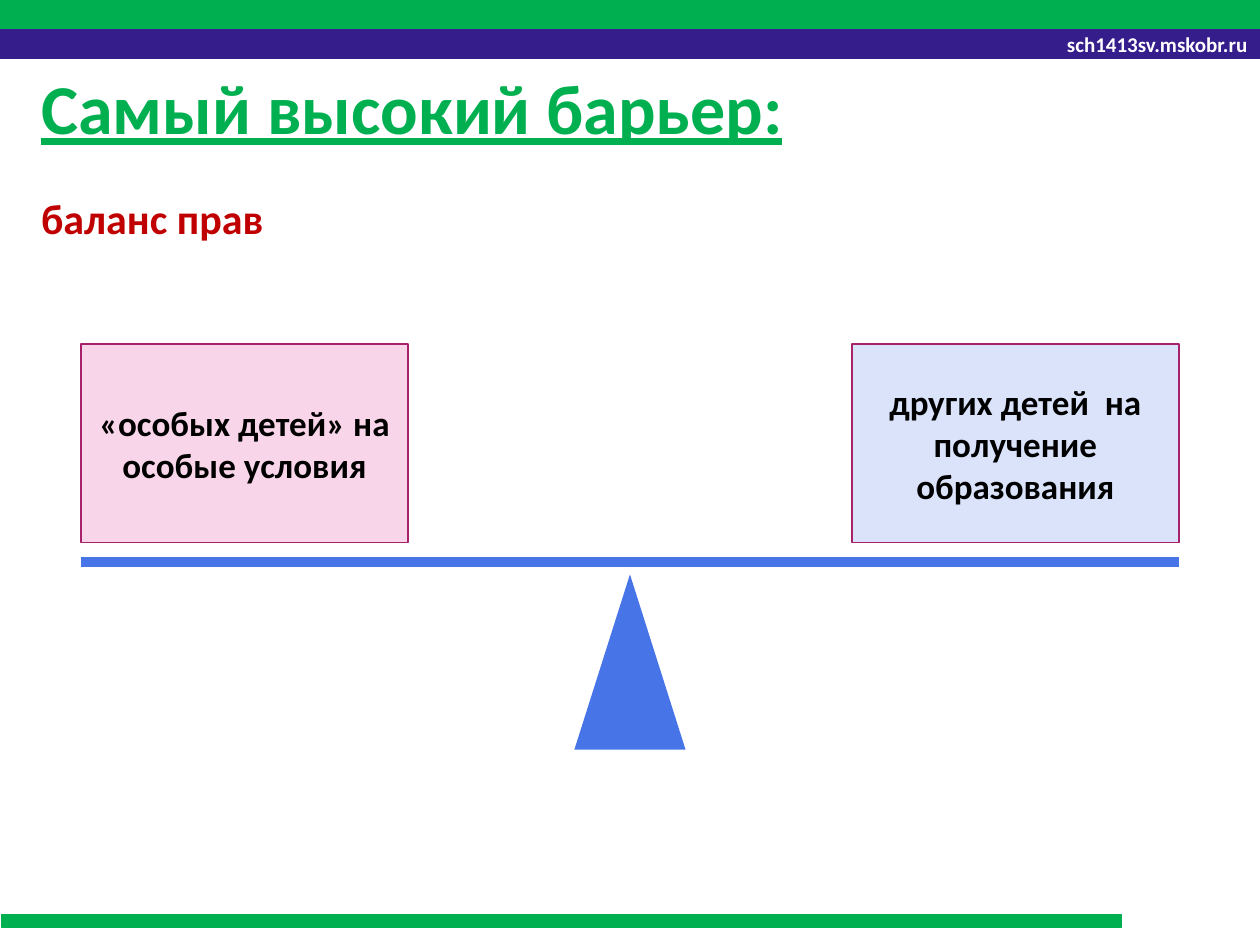
from dataclasses import dataclass
from typing import Optional

from lxml import etree
from pptx import Presentation
from pptx.dml.color import RGBColor
from pptx.enum.shapes import MSO_CONNECTOR, MSO_SHAPE
from pptx.enum.text import MSO_ANCHOR, MSO_AUTO_SIZE, PP_ALIGN
from pptx.oxml.ns import qn
from pptx.util import Cm, Pt

RECT = MSO_SHAPE.RECTANGLE
TRIANGLE = MSO_SHAPE.ISOSCELES_TRIANGLE
STRAIGHT = MSO_CONNECTOR.STRAIGHT
MIDDLE = MSO_ANCHOR.MIDDLE
NO_FIT = MSO_AUTO_SIZE.NONE
FIT_SHAPE = MSO_AUTO_SIZE.SHAPE_TO_FIT_TEXT
LEFT, CENTER, RIGHT = PP_ALIGN.LEFT, PP_ALIGN.CENTER, PP_ALIGN.RIGHT


@dataclass(frozen=True)
class Theme:
    font: str = "Calibri"
    green: str = "00B050"
    violet: str = "351D8C"
    blue: str = "4775E7"
    pink: str = "F9D5E9"
    pale_blue: str = "DAE3FA"
    plum: str = "A8216B"
    red: str = "C00000"
    black: str = "000000"
    white: str = "FFFFFF"
    title_size: int = 40
    subtitle_size: int = 24
    box_size: int = 20
    site_size: int = 12


@dataclass(frozen=True)
class Block:
    left: float
    top: float
    width: float
    height: float
    fill: str
    line: Optional[str] = None
    preset: MSO_SHAPE = RECT
    text: str = ""
    size: int = 12
    color: str = "000000"
    align: PP_ALIGN = CENTER


THEME = Theme()
SLIDE_W, SLIDE_H = 25.4, 19.05
BAND_H = 0.56
MARGIN = 0.58
BEAM_LEFT, BEAM_Y = 1.63, 11.33
BEAM_RIGHT = SLIDE_W - BEAM_LEFT
BOX_W, BOX_H, BOX_TOP = 6.6, 4.01, 6.93
PIVOT_W, PIVOT_H, PIVOT_TOP = 2.24, 3.53, 11.58


def set_text(tf, text: str, size: int, color: str, align: PP_ALIGN) -> None:
    tf.text = text
    p = tf.paragraphs[0]
    p.alignment = align
    font = p.runs[0].font
    font.name = THEME.font
    font.size = Pt(size)
    font.bold = True
    font.color.rgb = RGBColor.from_string(color)


def draw_block(slide, block: Block) -> None:
    sp = slide.shapes.add_shape(
        block.preset, Cm(block.left), Cm(block.top), Cm(block.width), Cm(block.height)
    )
    sp.shadow.inherit = False
    sp.fill.solid()
    sp.fill.fore_color.rgb = RGBColor.from_string(block.fill)
    if block.line:
        sp.line.color.rgb = RGBColor.from_string(block.line)
        sp.line.width = Pt(1)
    else:
        sp.line.fill.background()
    if block.text:
        sp.text_frame.word_wrap = True
        sp.text_frame.vertical_anchor = MIDDLE
        set_text(sp.text_frame, block.text, block.size, block.color, block.align)


def draw_beam(slide) -> None:
    beam = slide.shapes.add_connector(
        STRAIGHT, Cm(BEAM_LEFT), Cm(BEAM_Y), Cm(BEAM_RIGHT), Cm(BEAM_Y)
    )
    beam.line.color.rgb = RGBColor.from_string(THEME.blue)
    beam.line.width = Pt(6)
    etree.SubElement(beam._element.spPr, qn("a:effectLst"))


def draw_title(slide, text: str) -> None:
    title = slide.shapes.title
    title.left, title.top = Cm(MARGIN), Cm(0.74)
    title.width, title.height = Cm(23.8), Cm(3.02)
    tf = title.text_frame
    tf.auto_size = NO_FIT
    tf.vertical_anchor = MIDDLE
    set_text(tf, text, THEME.title_size, THEME.green, LEFT)
    p = tf.paragraphs[0]
    p.line_spacing = 0.9
    p.runs[0].font.underline = True


def draw_subtitle(slide, text: str) -> None:
    box = slide.shapes.add_textbox(Cm(MARGIN), Cm(3.76), Cm(5.03), Cm(1.27))
    tf = box.text_frame
    tf.word_wrap = False
    tf.auto_size = FIT_SHAPE
    set_text(tf, text, THEME.subtitle_size, THEME.red, LEFT)


def main() -> None:
    prs = Presentation()
    prs.slide_width, prs.slide_height = Cm(SLIDE_W), Cm(SLIDE_H)
    slide = prs.slides.add_slide(prs.slide_layouts[5])

    bands = [
        Block(0, 0, SLIDE_W, BAND_H, THEME.green, THEME.green),
        Block(0, 0.61, SLIDE_W, BAND_H, THEME.violet, THEME.violet,
              text="sch1413sv.mskobr.ru", size=THEME.site_size,
              color=THEME.white, align=RIGHT),
        Block(0.03, 18.44, 22.58, 0.25, THEME.green, THEME.green),
    ]
    pivot = Block((SLIDE_W - PIVOT_W) / 2, PIVOT_TOP, PIVOT_W, PIVOT_H,
                  THEME.blue, preset=TRIANGLE)
    weights = [
        Block(left, BOX_TOP, BOX_W, BOX_H, fill, THEME.plum,
              text=text, size=THEME.box_size, color=THEME.black)
        for left, fill, text in (
            (BEAM_LEFT, THEME.pink, "«особых детей» на особые условия"),
            (BEAM_RIGHT - BOX_W, THEME.pale_blue,
             "других детей  на получение образования"),
        )
    ]

    for block in [*bands, pivot]:
        draw_block(slide, block)
    draw_beam(slide)
    for block in weights:
        draw_block(slide, block)
    draw_title(slide, "Самый высокий барьер:")
    draw_subtitle(slide, "баланс прав")
    prs.save("out.pptx")


if __name__ == "__main__":
    main()
